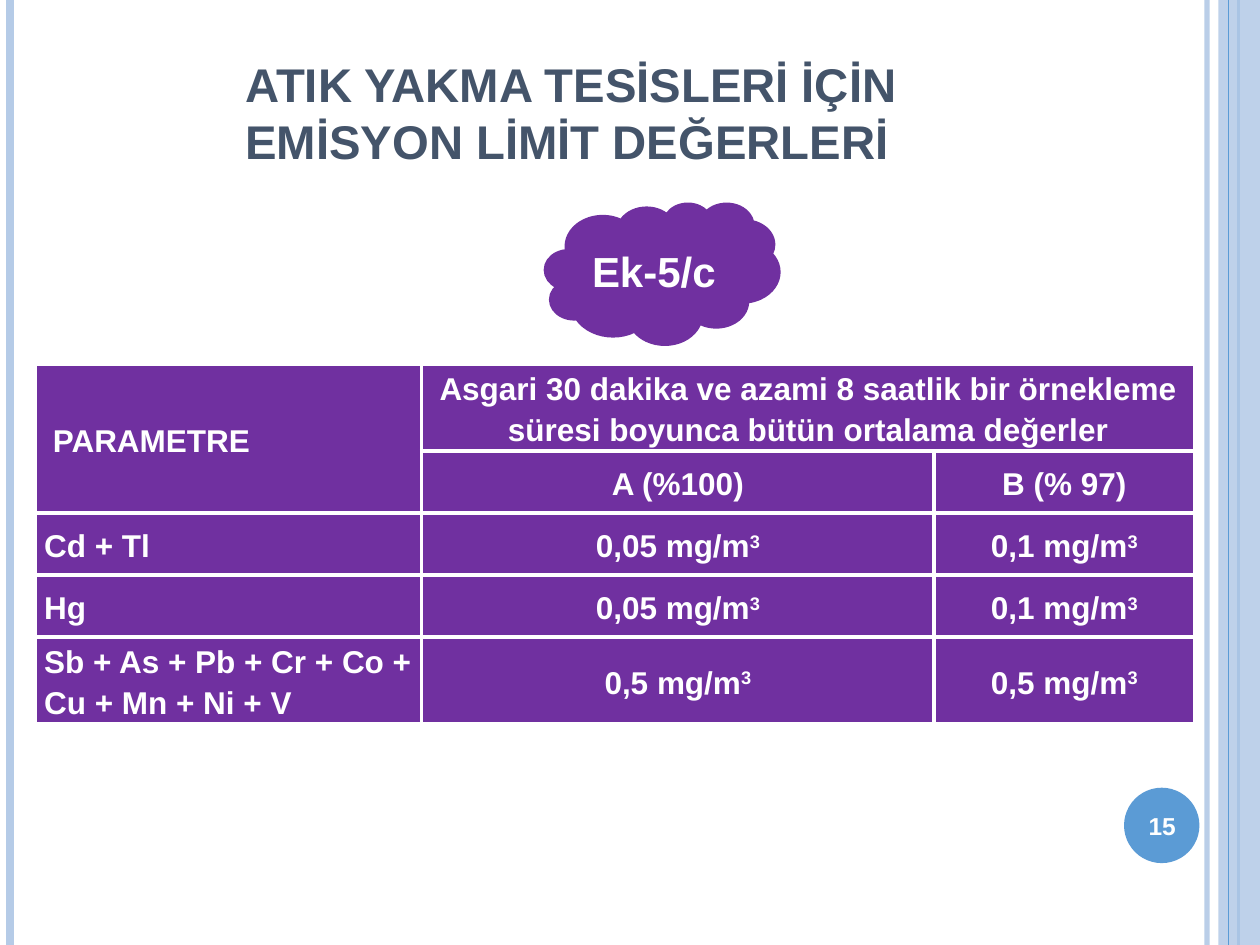
from dataclasses import dataclass
from itertools import product

from lxml import etree
from pptx import Presentation
from pptx.dml.color import RGBColor
from pptx.enum.shapes import MSO_CONNECTOR, MSO_SHAPE
from pptx.enum.text import MSO_ANCHOR, PP_ALIGN
from pptx.oxml.ns import qn
from pptx.util import Cm, Pt

STRAIGHT = MSO_CONNECTOR.STRAIGHT
RECTANGLE, OVAL, CLOUD = MSO_SHAPE.RECTANGLE, MSO_SHAPE.OVAL, MSO_SHAPE.CLOUD
MIDDLE, BOTTOM = MSO_ANCHOR.MIDDLE, MSO_ANCHOR.BOTTOM
LEFT, CENTER = PP_ALIGN.LEFT, PP_ALIGN.CENTER


@dataclass(frozen=True)
class Theme:
    font: str = "Arial"
    white: str = "FFFFFF"
    purple: str = "7030A0"
    pale_blue: str = "B5CBE7"
    blue: str = "5B9BD5"
    slate: str = "44546A"
    title_size: int = 27
    cloud_size: int = 24
    table_size: int = 18
    number_size: int = 14
    border_width: float = 2.25


THEME = Theme()
SLIDE_WIDTH, SLIDE_HEIGHT = 25.4, 19.05

TITLE = "ATIK YAKMA TESİSLERİ İÇİN EMİSYON LİMİT DEĞERLERİ"
ANNEX = "Ek-5/c"
PAGE_NUMBER = "15"

HEADINGS = [
    (" PARAMETRE", "Asgari 30 dakika ve azami 8 saatlik bir örnekleme süresi boyunca bütün ortalama değerler", ""),
    ("", "A (%100)", "B (% 97)"),
]
LIMITS = [
    ("Cd + Tl", "0,05", "0,1"),
    ("Hg", "0,05", "0,1"),
    ("Sb + As + Pb + Cr + Co + Cu + Mn + Ni + V", "0,5", "0,5"),
]
UNIT, EXPONENT = "mg/m", "3"
COLUMN_WIDTHS = [7.79, 10.33, 5.25]
ROW_HEIGHT = 1.25
TABLE_LEFT, TABLE_TOP = 0.71, 7.34

RULES_BEHIND_BAND = [
    (24.33, THEME.pale_blue, 3, 93),
    (0.2, THEME.pale_blue, 4.5, 100),
    (24.97, THEME.blue, 1.5, 100),
]
RULES_OVER_BAND = [(24.77, THEME.blue, 0.75, 100)]
BAND_LEFT, BAND_OPACITY = 24.56, 87


def set_opacity(element, percent):
    for color in element.iter(qn("a:srgbClr")):
        etree.SubElement(color, qn("a:alpha"), val=str(percent * 1000))


def add_rules(slide, rules):
    for x, color, width, opacity in rules:
        rule = slide.shapes.add_connector(STRAIGHT, Cm(x), Cm(0), Cm(x), Cm(SLIDE_HEIGHT))
        rule.line.color.rgb = RGBColor.from_string(color)
        rule.line.width = Pt(width)
        if opacity < 100:
            set_opacity(rule.line._ln, opacity)
        etree.SubElement(rule._element.spPr, qn("a:effectLst"))


def add_filled(slide, preset, box, color):
    shape = slide.shapes.add_shape(preset, *map(Cm, box))
    shape.shadow.inherit = False
    shape.fill.solid()
    shape.fill.fore_color.rgb = RGBColor.from_string(color)
    shape.line.fill.background()
    return shape


def add_run(paragraph, text, size, color=THEME.white):
    run = paragraph.add_run()
    run.text = text
    run.font.name = THEME.font
    run.font.size = Pt(size)
    run.font.bold = True
    run.font.color.rgb = RGBColor.from_string(color)
    return run


def write(frame, text, size, color=THEME.white, anchor=MIDDLE, align=CENTER):
    frame.word_wrap = True
    frame.vertical_anchor = anchor
    paragraph = frame.paragraphs[0]
    paragraph.alignment = align
    add_run(paragraph, text, size, color)


def style_cell(cell):
    properties = cell._tc.get_or_add_tcPr()
    for side in ("lnL", "lnR", "lnT", "lnB"):
        border = etree.SubElement(properties, qn(f"a:{side}"), w=str(Pt(THEME.border_width)))
        fill = etree.SubElement(border, qn("a:solidFill"))
        etree.SubElement(fill, qn("a:srgbClr"), val=THEME.white)
    cell.fill.solid()
    cell.fill.fore_color.rgb = RGBColor.from_string(THEME.purple)
    cell.vertical_anchor = MIDDLE
    cell.margin_left = cell.margin_right = Cm(0.18)
    cell.margin_top = cell.margin_bottom = 0


def add_limits_table(slide):
    rows = HEADINGS + LIMITS
    frame = slide.shapes.add_table(
        len(rows), len(COLUMN_WIDTHS), Cm(TABLE_LEFT), Cm(TABLE_TOP),
        Cm(sum(COLUMN_WIDTHS)), Cm(ROW_HEIGHT * len(rows)),
    )
    table = frame.table
    for column, width in zip(table.columns, COLUMN_WIDTHS):
        column.width = Cm(width)
    for row in table.rows:
        row.height = Cm(ROW_HEIGHT)
    table.cell(0, 0).merge(table.cell(1, 0))
    table.cell(0, 1).merge(table.cell(0, 2))

    for r, c in product(range(len(rows)), range(len(COLUMN_WIDTHS))):
        cell, text = table.cell(r, c), rows[r][c]
        style_cell(cell)
        if not text:
            continue
        is_heading, is_limit = r < len(HEADINGS), r >= len(HEADINGS) and c > 0
        paragraph = cell.text_frame.paragraphs[0]
        paragraph.alignment = CENTER if c else LEFT
        paragraph.line_spacing = 1.15
        paragraph.space_after = Pt(3 if is_heading else 10 if is_limit else 0)
        add_run(paragraph, f"{text} {UNIT}" if is_limit else text, THEME.table_size)
        if is_limit:
            exponent = add_run(paragraph, EXPONENT, THEME.table_size)
            exponent.font._element.set("baseline", "30000")


def main():
    deck = Presentation()
    deck.slide_width, deck.slide_height = Cm(SLIDE_WIDTH), Cm(SLIDE_HEIGHT)
    slide = deck.slides.add_slide(deck.slide_layouts[6])

    add_rules(slide, RULES_BEHIND_BAND)
    band_box = (BAND_LEFT, 0, SLIDE_WIDTH - BAND_LEFT, SLIDE_HEIGHT)
    band = add_filled(slide, RECTANGLE, band_box, THEME.pale_blue)
    set_opacity(band._element.spPr, BAND_OPACITY)
    add_rules(slide, RULES_OVER_BAND)
    add_filled(slide, OVAL, (22.66, 15.88, 1.52, 1.52), THEME.blue)

    title = slide.shapes.add_textbox(Cm(4.7), Cm(1.12), Cm(17.32), Cm(2.41))
    write(title.text_frame, TITLE, THEME.title_size, THEME.slate, BOTTOM, LEFT)
    number = slide.shapes.add_textbox(Cm(22.58), Cm(15.93), Cm(1.7), Cm(1.45))
    write(number.text_frame, PAGE_NUMBER, THEME.number_size)

    add_limits_table(slide)

    cloud = add_filled(slide, CLOUD, (11, 4.11, 4.7, 2.82), THEME.purple)
    cloud.line.color.rgb = RGBColor.from_string(THEME.purple)
    cloud.line.width = Pt(2)
    write(cloud.text_frame, ANNEX, THEME.cloud_size)

    deck.save("out.pptx")


if __name__ == "__main__":
    main()
